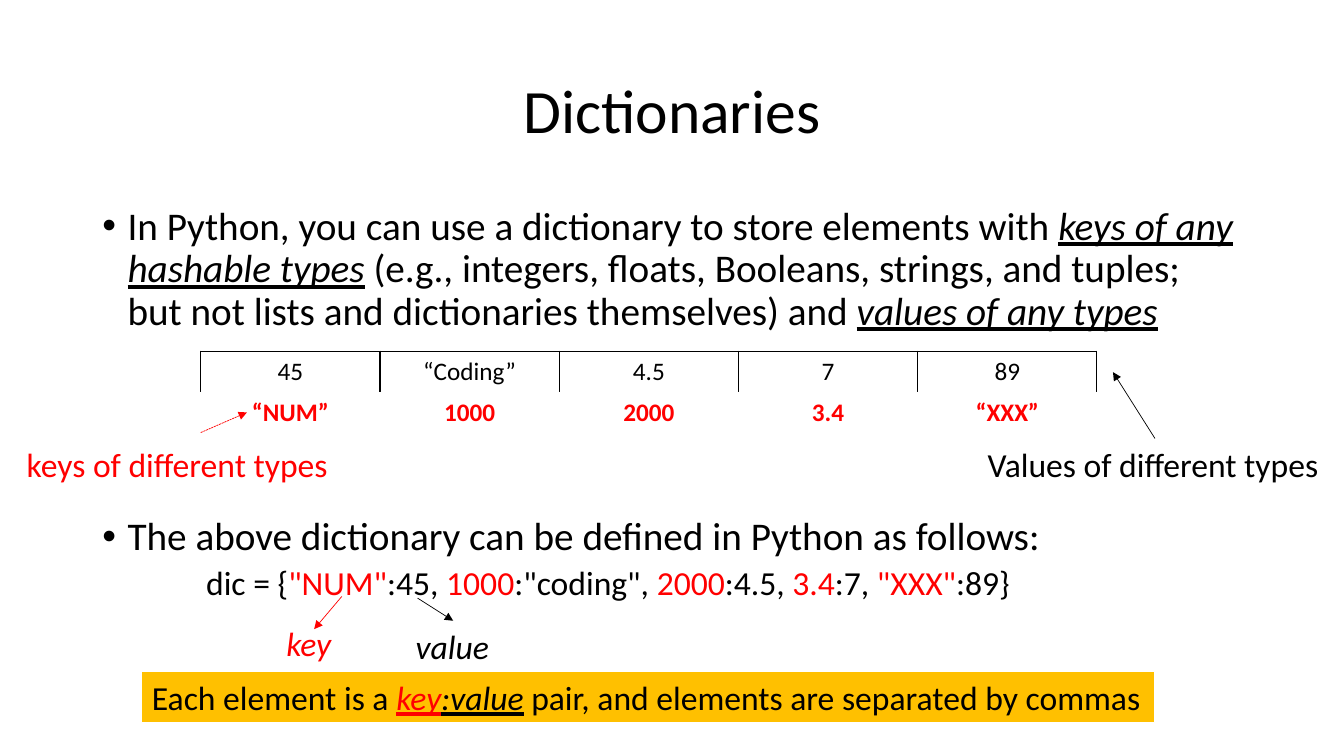
"""Build the Dictionaries slide on a grid of 160 columns by 90 rows."""
from typing import NamedTuple, Optional

from lxml.etree import SubElement
from pptx import Presentation
from pptx.dml.color import RGBColor
from pptx.enum.dml import MSO_LINE
from pptx.enum.shapes import MSO_CONNECTOR, MSO_SHAPE
from pptx.enum.text import MSO_ANCHOR, MSO_AUTO_SIZE, PP_ALIGN
from pptx.oxml import parse_xml
from pptx.oxml.ns import nsdecls, qn
from pptx.util import Inches, Pt

BLACK, RED, GOLD, WHITE = "000000", "FF0000", "FFC000", "FFFFFF"
COLS, ROWS = 160, 90

deck = Presentation()
deck.slide_width, deck.slide_height = Inches(13.33), Inches(7.5)
slide = deck.slides.add_slide(deck.slide_layouts[6])
shapes = slide.shapes


class Run(NamedTuple):
    text: str
    color: str = BLACK
    italic: bool = False
    under: bool = False
    bold: bool = False


class Box(NamedTuple):
    col: float
    row: float
    wide: float
    high: float


class Label(NamedTuple):
    box: Box
    run: Run


class Arrow(NamedTuple):
    start: tuple
    end: tuple
    color: str = BLACK
    dash: bool = False
    tail: Optional[str] = None
    head: Optional[str] = None


class Strip(NamedTuple):
    row: float
    words: list
    color: str
    bold: bool
    edged: bool


def across(cols: float) -> int:
    return round(deck.slide_width * cols / COLS)


def down(rows: float) -> int:
    return round(deck.slide_height * rows / ROWS)


def place(box: Box) -> tuple:
    return across(box.col), down(box.row), across(box.wide), down(box.high)


def paint(color: str) -> RGBColor:
    return RGBColor.from_string(color)


def write(para, *runs: Run, size=24, align=PP_ALIGN.LEFT, lines=None,
          before=0, inset=0.0, bullet=False) -> None:
    para.alignment, para.line_spacing, para.space_before = align, lines, Pt(before)
    props = para._p.get_or_add_pPr()
    if inset:
        props.set("marL", str(Inches(inset)))
    if bullet:
        props.set("indent", str(-Inches(inset)))
        SubElement(props, qn("a:buFont"), typeface="Arial")
        SubElement(props, qn("a:buChar"), char="•")
    for item in runs:
        run = para.add_run()
        run.text = item.text
        font = run.font
        font.name, font.size, font.color.rgb = "Calibri", Pt(size), paint(item.color)
        font.bold, font.italic, font.underline = item.bold, item.italic, item.under


def frame(box: Box):
    text = shapes.add_textbox(*place(box)).text_frame
    text.word_wrap = True
    return text


def fit(shape, *runs: Run):
    text = shape.text_frame
    text.word_wrap, text.auto_size = False, MSO_AUTO_SIZE.SHAPE_TO_FIT_TEXT
    write(text.paragraphs[0], *runs)
    return shape


def edge(cell) -> None:
    props = cell._tc.get_or_add_tcPr()
    for spot, side in enumerate("LRTB"):
        props.insert(spot, parse_xml(
            f'<a:ln{side} w="12700" {nsdecls("a")}><a:solidFill>'
            f'<a:srgbClr val="{BLACK}"/></a:solidFill></a:ln{side}>'))


def grid(strip: Strip) -> None:
    area = Box(23.9, strip.row, 106.7, 4.9)
    table = shapes.add_table(1, len(strip.words), *place(area)).table
    table.first_row = table.horz_banding = False
    for col, word in enumerate(strip.words):
        table.columns[col].width = across(area.wide / len(strip.words))
        cell = table.cell(0, col)
        cell.fill.background()
        write(cell.text_frame.paragraphs[0], Run(word, strip.color, bold=strip.bold),
              size=18, align=PP_ALIGN.CENTER)
        if strip.edged:
            edge(cell)


def point(arrow: Arrow, notes: dict) -> None:
    (left, top), (right, base) = arrow.start, arrow.end
    link = shapes.add_connector(MSO_CONNECTOR.STRAIGHT, across(left), down(top),
                                across(right), down(base))
    if arrow.tail:
        link.begin_connect(notes[arrow.tail], 0)
    if arrow.head:
        link.end_connect(notes[arrow.head], 0)
    link.line.color.rgb, link.line.width = paint(arrow.color), Pt(0.5)
    if arrow.dash:
        link.line.dash_style = MSO_LINE.SQUARE_DOT
    SubElement(link.line._get_or_add_ln(), qn("a:tailEnd"), type="triangle")
    SubElement(link._element.spPr, qn("a:effectLst"))


def main() -> None:
    title = frame(Box(11, 4.8, 138, 17.4))
    title.vertical_anchor = MSO_ANCHOR.MIDDLE
    write(title.paragraphs[0], Run("Dictionaries"), size=44,
          align=PP_ALIGN.CENTER, lines=0.9)

    body = frame(Box(11, 24, 138, 57.1))
    point_style = dict(size=28, lines=0.9, inset=0.25, bullet=True)
    write(body.paragraphs[0],
          Run("In Python, you can use a dictionary to store elements with "),
          Run("keys of any hashable types", italic=True, under=True),
          Run(" (e.g., integers, floats, Booleans, strings, and tuples; "
              "but not lists and dictionaries themselves) and "),
          Run("values of any types", italic=True, under=True),
          before=10, **point_style)
    write(body.add_paragraph(),
          Run("The above dictionary can be defined in Python as follows:"),
          before=131, **point_style)
    pairs = [('"NUM"', "45"), ("1000", '"coding"'), ("2000", "4.5"),
             ("3.4", "7"), ('"XXX"', "89")]
    code = [Run("dic = {")]
    for spot, (key, value) in enumerate(pairs, 1):
        close = "}" if spot == len(pairs) else ", "
        code += [Run(key, RED), Run(f":{value}{close}")]
    write(body.add_paragraph(), *code, lines=0.9, before=5, inset=1.03)

    for strip in (
        Strip(41.8, ["45", "“Coding”", "4.5", "7", "89"], BLACK, False, True),
        Strip(46.7, ["“NUM”", "1000", "2000", "3.4", "“XXX”"], RED, True, False),
    ):
        grid(strip)

    banner = shapes.add_shape(MSO_SHAPE.RECTANGLE, *place(Box(16.9, 80, 120.6, 6)))
    banner.shadow.inherit = False
    banner.fill.solid()
    banner.fill.fore_color.rgb = paint(GOLD)
    banner.line.color.rgb, banner.line.width = paint(WHITE), Pt(0.75)
    fit(banner, Run("Each element is a "), Run("key", RED, True, True),
        Run(":value", italic=True, under=True),
        Run(" pair, and elements are separated by commas"))

    labels = [
        Label(Box(2, 52.2, 38.6, 6), Run("keys of different types", RED)),
        Label(Box(32.9, 73.6, 7.8, 6), Run("key", RED, italic=True)),
        Label(Box(48.3, 73.9, 11.3, 6), Run("value", italic=True)),
        Label(Box(116.4, 52.2, 42.2, 6), Run("Values of different types")),
    ]
    notes = {label.run.text: fit(shapes.add_textbox(*place(label.box)), label.run)
             for label in labels}
    for arrow in (
        Arrow((23.9, 51.5), (29.4, 49.1), RED, dash=True),
        Arrow((40.7, 71), (37.4, 74.9), RED),
        Arrow((49.7, 71.2), (53.9, 73.9), head="value"),
        Arrow((137.5, 52.2), (132.5, 44.3), tail="Values of different types"),
    ):
        point(arrow, notes)

    deck.save("out.pptx")


if __name__ == "__main__":
    main()
